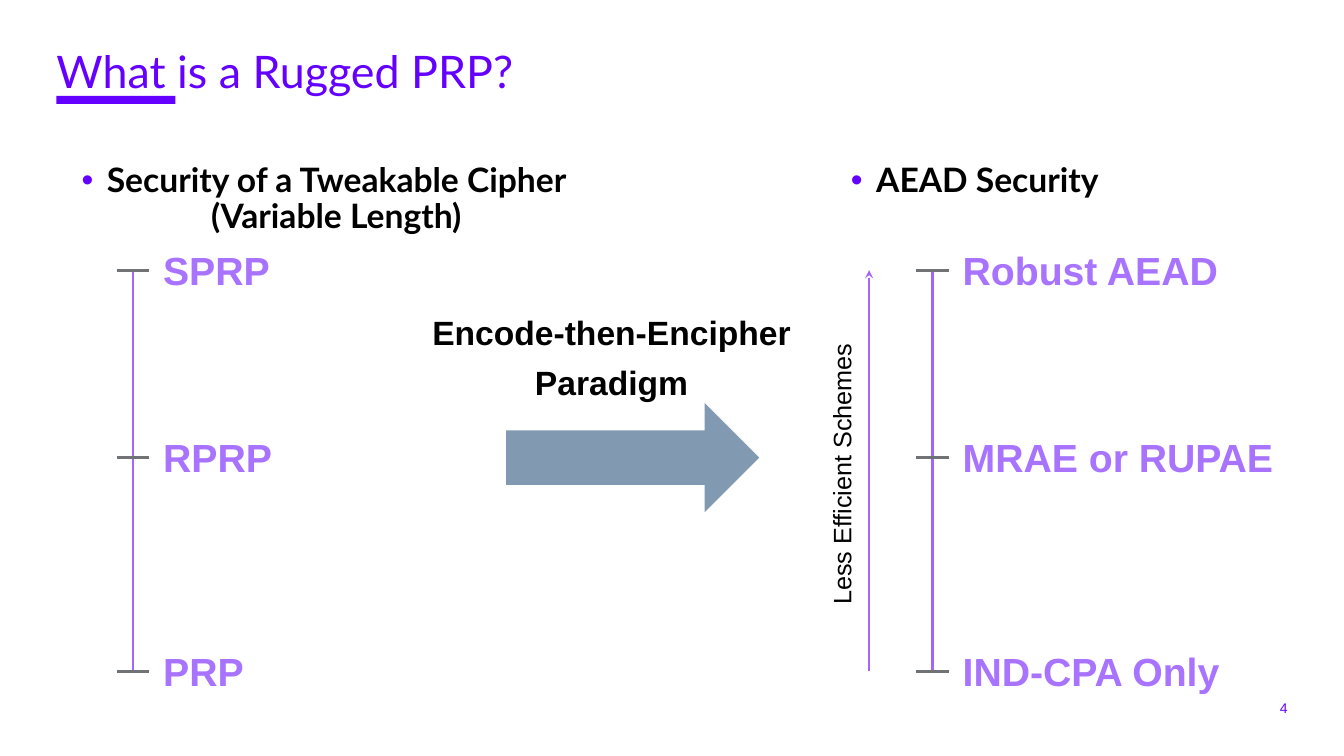
import dataclasses

import lxml.etree
import pptx
import pptx.dml.color
import pptx.enum.shapes
import pptx.enum.text
import pptx.oxml.ns
import pptx.util


@dataclasses.dataclass(frozen=True)
class Theme:
    accent: str = "6400FF"
    scale: str = "A266FF"
    level: str = "A873FF"
    tick: str = "6F7375"
    arrow: str = "8199B1"
    ink: str = "000000"
    heading_font: str = "Lato"
    label_font: str = "Arial"
    title_size: int = 32
    level_size: int = 28
    heading_size: int = 24
    axis_size: int = 18
    number_size: int = 10


theme = Theme()
rgb = pptx.dml.color.RGBColor.from_string
qname = pptx.oxml.ns.qn
align = pptx.enum.text.PP_ALIGN
anchors = pptx.enum.text.MSO_ANCHOR

deck = pptx.Presentation()
deck.slide_width = pptx.util.Inches(13.33)
deck.slide_height = pptx.util.Inches(7.5)
column = deck.slide_width / 13.33
row = deck.slide_height / 7.5


def write(box, cells, text, size, color, font=theme.label_font, bold=False,
          alignment=align.LEFT, anchor=anchors.TOP, spacing=1.0, inset=(0.1, 0.05),
          wrap=True, bullet=False):
    """Place a box at grid cells (left, top, width, height) and fill it, one paragraph a line."""
    left, top, width, height = cells
    box.left, box.width = int(left * column), int(width * column)
    box.top, box.height = int(top * row), int(height * row)
    frame = box.text_frame
    frame.word_wrap = wrap
    frame.auto_size = pptx.enum.text.MSO_AUTO_SIZE.NONE
    frame.vertical_anchor = anchor
    frame.margin_left = frame.margin_right = int(inset[0] * column)
    frame.margin_top = frame.margin_bottom = int(inset[1] * row)
    for index, line in enumerate(text.split("\n")):
        para = frame.add_paragraph() if index else frame.paragraphs[0]
        para.alignment = alignment
        para.line_spacing = spacing
        para.space_before = pptx.util.Pt(10 if index else 0)
        if bullet:
            properties = para._p.get_or_add_pPr()
            indent = int(0.25 * column)
            properties.set("marL", str(indent))
            properties.set("indent", str(-indent))
            bullet_color = lxml.etree.SubElement(properties, qname("a:buClr"))
            lxml.etree.SubElement(bullet_color, qname("a:srgbClr"), val=theme.accent)
            lxml.etree.SubElement(properties, qname("a:buFont"), typeface=theme.label_font)
            lxml.etree.SubElement(properties, qname("a:buChar"), char="•")
        span = para.add_run()
        span.text = line
        span.font.name = font
        span.font.size = pptx.util.Pt(size)
        span.font.bold = bold
        span.font.color.rgb = rgb(color)


def draw_line(page, start, end, color, weight, arrowhead=False):
    """Join two grid points; an arrowhead sits at the start."""
    line = page.shapes.add_connector(
        pptx.enum.shapes.MSO_CONNECTOR.STRAIGHT,
        int(start[0] * column), int(start[1] * row),
        int(end[0] * column), int(end[1] * row))
    line.line.color.rgb = rgb(color)
    line.line.width = pptx.util.Pt(weight)
    if arrowhead:
        lxml.etree.SubElement(line.line._get_or_add_ln(), qname("a:headEnd"), type="stealth")
    lxml.etree.SubElement(line._element.spPr, qname("a:effectLst"))


page = deck.slides.add_slide(deck.slide_layouts.get_by_name("Two Content"))
title, cipher_heading, aead_heading = page.placeholders

# Solid shapes: title underline and paradigm arrow
preset = pptx.enum.shapes.MSO_SHAPE
for kind, left, top, width, height, color in (
        (preset.RECTANGLE, 0.56, 0.95, 1.18, 0.08, theme.accent),
        (preset.RIGHT_ARROW, 5.02, 4, 2.51, 1.08, theme.arrow)):
    solid = page.shapes.add_shape(kind, int(left * column), int(top * row),
                                  int(width * column), int(height * row))
    solid.shadow.inherit = False
    solid.fill.solid()
    solid.fill.fore_color.rgb = rgb(color)
    solid.line.fill.background()

# Title and headings
write(title, (0.56, 0.49, 9.56, 0.68), "What is a Rugged PRP?", theme.title_size,
      theme.accent, font=theme.heading_font, spacing=0.9, inset=(0, 0))
for heading, cells, text, alignment in (
        (cipher_heading, (0.4, 1.57, 5.62, 0.82),
         "Security of a Tweakable Cipher (Variable Length)", align.CENTER),
        (aead_heading, (8.34, 1.57, 4.74, 0.57), "AEAD Security", align.LEFT)):
    write(heading, cells, text, theme.heading_size, theme.ink, font=theme.heading_font,
          bold=True, alignment=alignment, spacing=0.9, bullet=True)

# Two security scales with the same three levels
level_rows = (2.68, 4.54, 6.66)
scales = (
    (1.32, (("SPRP", 1.27), ("RPRP", 1.29), ("PRP", 1.01))),
    (9.25, (("Robust AEAD", 2.76), ("MRAE or RUPAE", 3.31), ("IND-CPA Only", 2.89))),
)
for axis, levels in scales:
    draw_line(page, (axis, level_rows[0]), (axis, level_rows[-1]), theme.scale, 1.75)
    for level_row, (name, width) in zip(level_rows, levels):
        draw_line(page, (axis - 0.16, level_row), (axis + 0.16, level_row), theme.tick, 2)
        write(page.shapes.add_textbox(0, 0, 0, 0), (axis + 0.2, level_row - 0.29, width, 0.57),
              name, theme.level_size, theme.level, bold=True, wrap=False)

# Efficiency axis
draw_line(page, (8.62, level_rows[0]), (8.62, level_rows[-1]), theme.scale, 1.75, arrowhead=True)
efficiency = page.shapes.add_textbox(0, 0, 0, 0)
efficiency.rotation = 270
write(efficiency, (6.93, 4.49, 2.86, 0.36), "Less Efficient Schemes",
      theme.axis_size, theme.ink, spacing=0.9)

# Paradigm caption and slide number
write(page.shapes.add_textbox(0, 0, 0, 0), (4.09, 3.09, 3.95, 0.82),
      "Encode-then-Encipher\nParadigm", theme.heading_size, theme.ink, bold=True,
      alignment=align.CENTER, spacing=0.9)
write(page.shapes.add_textbox(0, 0, 0, 0), (12.33, 6.94, 0.44, 0.16), "4",
      theme.number_size, theme.accent, alignment=align.RIGHT,
      anchor=anchors.MIDDLE, inset=(0, 0))

deck.save("out.pptx")
